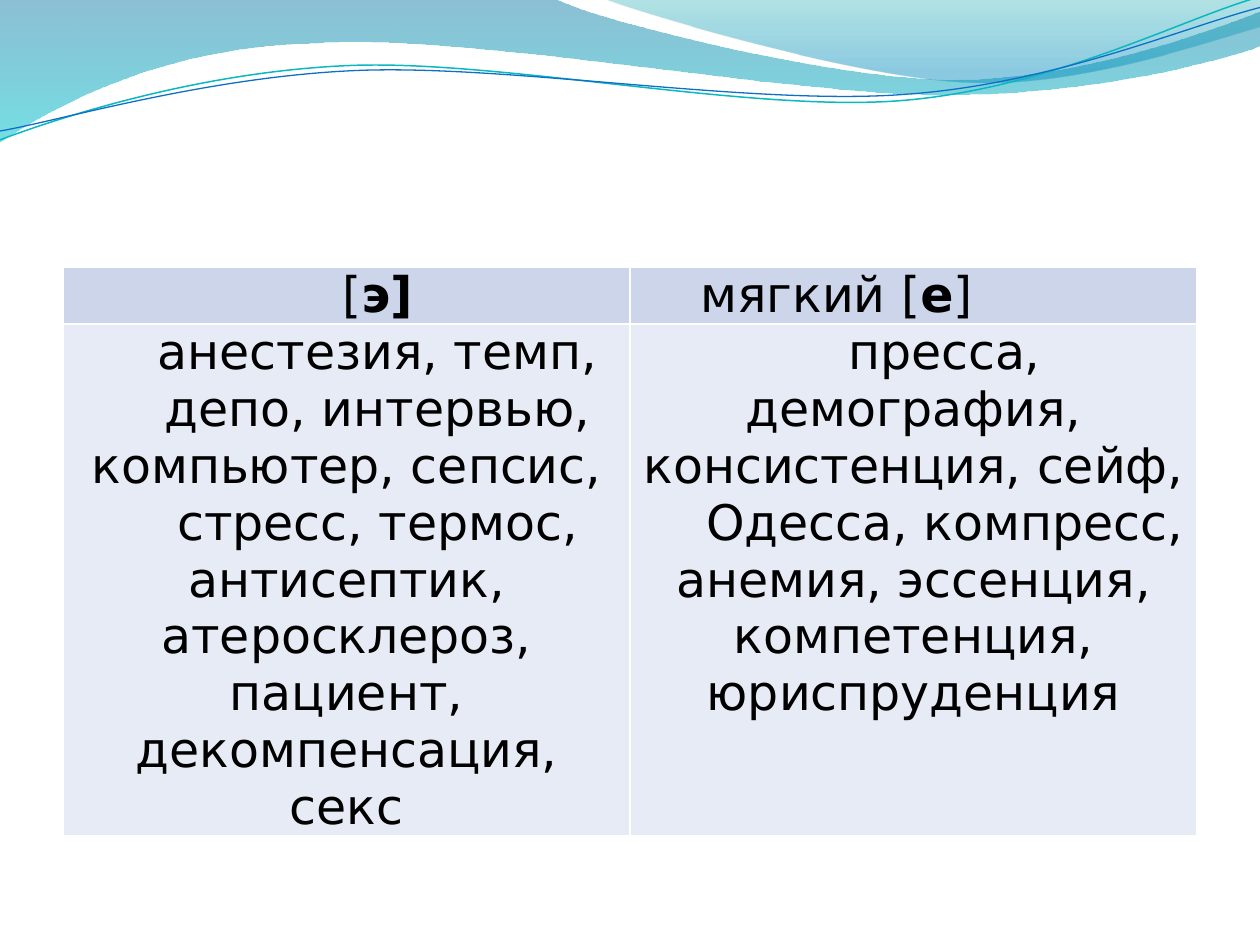
from dataclasses import dataclass
from math import cos, radians, sin

from lxml import etree
from pptx import Presentation
from pptx.dml.color import RGBColor
from pptx.enum.text import PP_ALIGN
from pptx.oxml.ns import qn
from pptx.util import Inches, Pt

CENTER, JUSTIFY = PP_ALIGN.CENTER, PP_ALIGN.JUSTIFY
BLANK_LAYOUT = 6

BLACK = RGBColor(0x00, 0x00, 0x00)
WHITE = RGBColor(0xFF, 0xFF, 0xFF)
HEADER_FILL = RGBColor(0xCC, 0xD5, 0xEA)
BODY_FILL = RGBColor(0xE7, 0xEB, 0xF5)
DEEP_BLUE = RGBColor(0x00, 0x74, 0xA1)
TURQUOISE = RGBColor(0x00, 0xC6, 0xCF)
TEAL = RGBColor(0x00, 0xA1, 0xA9)
SKY_BLUE = RGBColor(0x00, 0x8B, 0xBF)
LINE_TEAL = RGBColor(0x0A, 0xB8, 0xBF)
LINE_BLUE = RGBColor(0x0F, 0x6F, 0xC6)

TEXT_FORMAT = {"name": "DejaVu Sans", "size": Pt(28)}
CELL_MARGINS = {"margin_left": Inches(0.07), "margin_right": Inches(0.07),
                "margin_top": 0, "margin_bottom": 0}
PLAIN_TABLE = {"first_row": False, "horz_banding": False}


@dataclass
class GradientStop:
    position: float
    color: RGBColor
    opacity: int


@dataclass
class Wave:
    """Points in inches; a segment of one point is a line, of three a Bezier curve."""
    start: tuple
    segments: list
    stops: tuple = ()
    line_color: RGBColor | None = None
    line_width: float = 0
    rotation: float = 0
    center: tuple = (0, 0)


@dataclass
class CellContent:
    paragraphs: list  # each paragraph is a list of (text, bold)
    alignment: PP_ALIGN
    fill: RGBColor


FILLED_WAVES = [
    Wave((0, 0), [
        [(4.4, -0.01)],
        [(4.76, 0.17), (6.64, 0.63), (7.58, 0.63)],
        [(8.53, 0.63), (9.58, 0.26), (10, 0.09)],
        [(10.01, 0.36)],
        [(9.83, 0.44), (8.7, 0.76), (7.46, 0.75)],
        [(6.22, 0.75), (3.82, 0.28), (2.57, 0.34)],
        [(1.29, 0.36), (0.46, 0.83), (-0.01, 1.13)],
        [(0, 0)],
    ], stops=(GradientStop(0, DEEP_BLUE, 45), GradientStop(1, TURQUOISE, 55))),
    Wave((4.79, -0.01), [
        [(5.09, 0.11), (6.82, 0.62), (7.69, 0.65)],
        [(8.56, 0.69), (9.61, 0.32), (10, 0.21)],
        [(10, 0)],
        [(4.79, -0.01)],
    ], stops=(GradientStop(0, TEAL, 30), GradientStop(0.8, SKY_BLUE, 45))),
]
LINE_WAVES = [
    Wave((0, 1.11), [
        [(0.48, 0.93), (1.58, 0.57), (2.77, 0.52)],
        [(3.95, 0.47), (5.93, 0.89), (7.13, 0.8)],
        [(8.33, 0.71), (9.38, 0.15), (9.98, -0.02)],
    ], line_color=LINE_TEAL, line_width=0.85, rotation=-2.7, center=(4.99, 0.57)),
    Wave((0, 1.04), [
        [(0.47, 0.96), (1.64, 0.61), (2.83, 0.56)],
        [(4.03, 0.51), (5.97, 0.84), (7.17, 0.75)],
        [(8.36, 0.67), (9.41, 0.21), (10, 0.06)],
    ], line_color=LINE_BLUE, line_width=0.75, rotation=-2.7, center=(5, 0.59)),
]

TABLE_ROWS = [
    [
        CellContent([[("[", False), ("э]", True)]], CENTER, HEADER_FILL),
        CellContent([[("мягкий [", False), ("е", True), ("]", False)]],
                    JUSTIFY, HEADER_FILL),
    ],
    [
        CellContent([
            [("анестезия, темп,", False)],
            [("депо, интервью, компьютер, сепсис,", False)],
            [("стресс, термос, антисептик, атеросклероз, пациент, "
              "декомпенсация, секс", False)],
        ], CENTER, BODY_FILL),
        CellContent([
            [("пресса, демография, консистенция, сейф,", False)],
            [("Одесса, компресс, анемия, эссенция, компетенция, "
              "юриспруденция", False)],
        ], CENTER, BODY_FILL),
    ],
]
MINIMUM_ROW_HEIGHT = 0.41
COLUMN_WIDTH = 4.5
TABLE_HEIGHT = 4.2


def apply_format(target, values: dict) -> None:
    for name, value in values.items():
        setattr(target, name, value)


def turn(point: tuple, center: tuple, degrees: float) -> tuple:
    angle = radians(degrees)
    x, y = point[0] - center[0], point[1] - center[1]
    return (center[0] + x * cos(angle) - y * sin(angle),
            center[1] + x * sin(angle) + y * cos(angle))


def bend_segments(shape, segments: list) -> None:
    """Join every three line steps of a curved segment into one Bezier step."""
    steps = iter(list(shape.element.iter(qn("a:lnTo"))))
    for segment in segments:
        segment_steps = [next(steps) for _ in segment]
        if len(segment) == 3:
            curve = etree.Element(qn("a:cubicBezTo"))
            segment_steps[0].addprevious(curve)
            for step in segment_steps:
                curve.append(step[0])
                step.getparent().remove(step)


def draw_wave(shapes, wave: Wave) -> None:
    points = [wave.start] + [point for segment in wave.segments for point in segment]
    # Undo the rotation that the shape itself applies
    points = [turn(point, wave.center, -wave.rotation) for point in points]
    vertices = [(Inches(x), Inches(y)) for x, y in points]
    builder = shapes.build_freeform(*vertices[0])
    builder.add_line_segments(vertices[1:], close=bool(wave.stops))
    shape = builder.convert_to_shape()
    bend_segments(shape, wave.segments)
    shape.rotation = wave.rotation
    shape.shadow.inherit = False

    if not wave.stops:
        shape.fill.background()
        shape.line.color.rgb = wave.line_color
        shape.line.width = Pt(wave.line_width)
        return
    shape.line.fill.background()
    shape.fill.gradient()
    shape.fill.gradient_angle = 270  # counter-clockwise: top to bottom
    for gradient_stop, stop in zip(shape.fill.gradient_stops, wave.stops):
        gradient_stop.position = stop.position
        gradient_stop.color.rgb = stop.color
    for color, stop in zip(shape.element.spPr.iter(qn("a:srgbClr")), wave.stops):
        etree.SubElement(color, qn("a:alpha"), val=str(stop.opacity * 1000))


def add_borders(cell, color: RGBColor) -> None:
    properties = cell._tc.get_or_add_tcPr()
    for index, side in enumerate(("lnL", "lnR", "lnT", "lnB")):
        border = etree.Element(qn(f"a:{side}"), w=str(Pt(1)))
        fill = etree.SubElement(border, qn("a:solidFill"))
        etree.SubElement(fill, qn("a:srgbClr"), val=str(color))
        properties.insert(index, border)


def fill_cell(cell, content: CellContent) -> None:
    apply_format(cell, CELL_MARGINS)
    cell.fill.solid()
    cell.fill.fore_color.rgb = content.fill
    add_borders(cell, WHITE)
    frame = cell.text_frame
    for index, runs in enumerate(content.paragraphs):
        paragraph = frame.add_paragraph() if index else frame.paragraphs[0]
        paragraph.alignment = content.alignment
        paragraph._p.get_or_add_pPr().set("indent", str(Inches(0.49)))
        for text, bold in runs:
            run = paragraph.add_run()
            run.text = text
            apply_format(run.font, TEXT_FORMAT | {"bold": bold})
            run.font.color.rgb = BLACK


def draw_table(slide) -> None:
    column_count = len(TABLE_ROWS[0])
    table_frame = slide.shapes.add_table(
        len(TABLE_ROWS), column_count, Inches(0.5), Inches(2.12),
        Inches(COLUMN_WIDTH * column_count), Inches(TABLE_HEIGHT))
    table = table_frame.table
    apply_format(table, PLAIN_TABLE)
    for row, contents in zip(table.rows, TABLE_ROWS):
        row.height = Inches(MINIMUM_ROW_HEIGHT)  # rows grow with their text
        for cell, content in zip(row.cells, contents):
            fill_cell(cell, content)
    table_frame.height = Inches(TABLE_HEIGHT)


def main() -> None:
    presentation = Presentation()
    apply_format(presentation, {"slide_width": Inches(10), "slide_height": Inches(7.5)})
    slide = presentation.slides.add_slide(presentation.slide_layouts[BLANK_LAYOUT])
    # Wave decoration along the top
    for wave in FILLED_WAVES:
        draw_wave(slide.shapes, wave)
    line_group = slide.shapes.add_group_shape()
    for wave in LINE_WAVES:
        draw_wave(line_group.shapes, wave)
    # Pronunciation table
    draw_table(slide)
    presentation.save("out.pptx")


if __name__ == "__main__":
    main()
